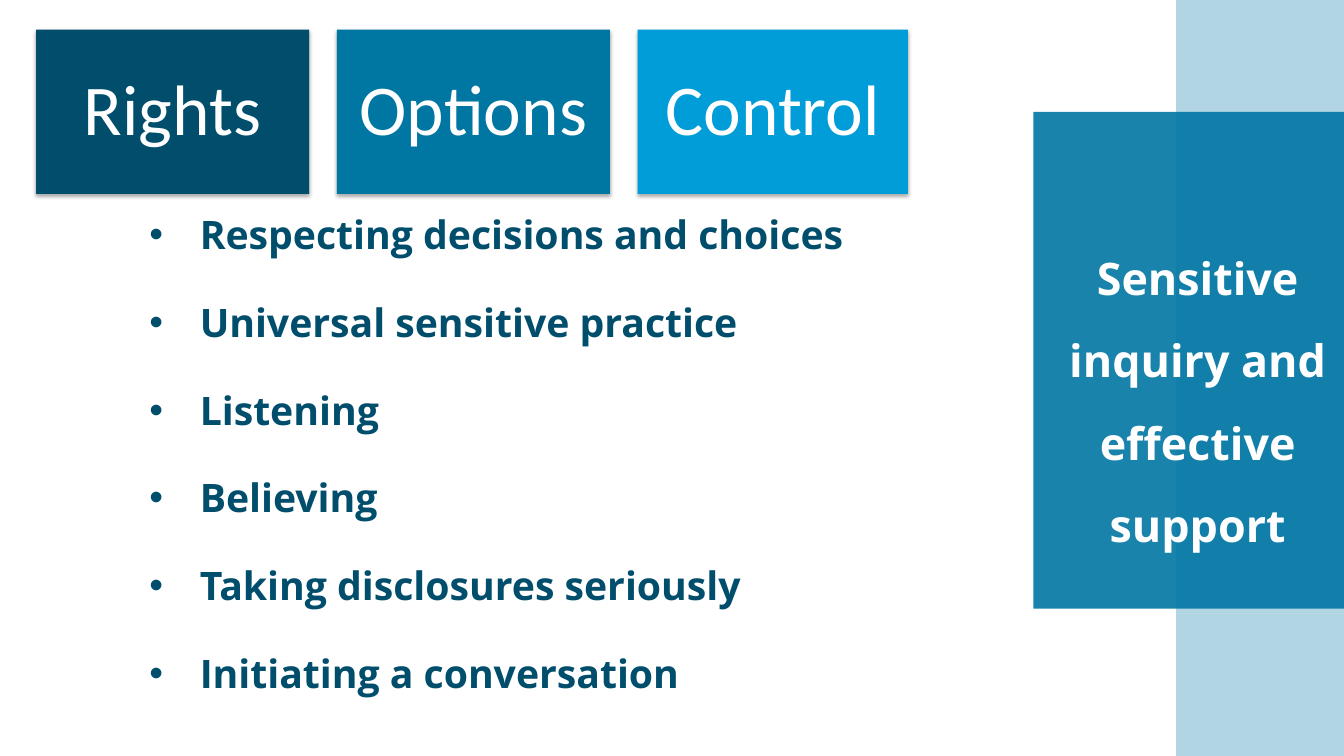
from lxml import etree
from pptx import Presentation
from pptx.dml.color import RGBColor
from pptx.enum import shapes, text
from pptx.oxml import ns
from pptx.util import Cm, Pt

NAVY = RGBColor(0x00, 0x4E, 0x6C)
TEAL = RGBColor(0x00, 0x76, 0xA3)
SKY = RGBColor(0x00, 0x9D, 0xD9)
WHITE = RGBColor(0xFF, 0xFF, 0xFF)


def add_block(left, top, width, height, color):
    block = slide.shapes.add_shape(
        shapes.MSO_SHAPE.RECTANGLE, Cm(left), Cm(top), Cm(width), Cm(height))
    block.shadow.inherit = False
    block.fill.solid()
    block.fill.fore_color.rgb = color
    block.line.fill.background()
    return block


def add_color_node(parent, color, opacity):
    """Add a colour with its opacity in percent under an XML parent."""
    node = etree.SubElement(parent, ns.qn("a:srgbClr"), val=str(color))
    etree.SubElement(node, ns.qn("a:alpha"), val=str(opacity * 1000))


prs = Presentation()
prs.slide_width, prs.slide_height = Cm(33.87), Cm(19.05)
slide = prs.slides.add_slide(prs.slide_layouts[1])
title, practices = slide.placeholders

# Side band and title panel, both translucent
for left, top, width, height, opacity in [
        (29.64, 0, 4.29, 19.05, 30), (26.04, 2.82, 8.1, 12.52, 90)]:
    panel = add_block(left, top, width, height, TEAL)
    fill = panel.element.spPr.find(ns.qn("a:solidFill"))
    fill.remove(fill[0])
    add_color_node(fill, TEAL, opacity)

# Title, brought in front of its panel
title.left, title.top, title.width, title.height = Cm(26.49), Cm(5.59), Cm(7.39), Cm(8.41)
slide.shapes.element.append(title.element)
frame = title.text_frame
frame.text = "Sensitive inquiry and effective support"
frame.word_wrap = True
frame.auto_size = text.MSO_AUTO_SIZE.NONE
frame.vertical_anchor = text.MSO_ANCHOR.TOP
frame.margin_left = frame.margin_right = frame.margin_top = frame.margin_bottom = 0
heading = frame.paragraphs[0]
heading.alignment = text.PP_ALIGN.CENTER
heading.line_spacing = Pt(58.9)
heading.font.name, heading.font.size, heading.font.bold = "Open Sans", Pt(32), True
heading.font.color.rgb = WHITE

# Practice list
practices.left, practices.top, practices.width, practices.height = (
    Cm(2.24), Cm(5.31), Cm(23.09), Cm(13.7))
frame = practices.text_frame
frame.text = "\n".join([
    "Respecting decisions and choices",
    "Universal sensitive practice",
    "Listening",
    "Believing",
    "Taking disclosures seriously",
    "Initiating a conversation",
])
frame.word_wrap = True
frame.auto_size = text.MSO_AUTO_SIZE.NONE
frame.vertical_anchor = text.MSO_ANCHOR.TOP
frame.margin_top = frame.margin_bottom = 0
for index, practice in enumerate(frame.paragraphs):
    props = practice._p.get_or_add_pPr()
    props.set("marL", str(Cm(2.54)))
    props.set("indent", str(Cm(-1.27)))
    etree.SubElement(props, ns.qn("a:buFont"), typeface="Arial")
    etree.SubElement(props, ns.qn("a:buChar"), char="•")
    practice.space_before = Pt(29 if index else 0)
    practice.font.name, practice.font.size, practice.font.bold = "Open Sans", Pt(28), True
    practice.font.color.rgb = NAVY

# Three principle cards in a row
for index, (principle, color, width) in enumerate([
        ("Rights", NAVY, 6.88), ("Options", TEAL, 6.88), ("Control", SKY, 6.81)]):
    card = add_block(0.91 + index * 7.58, 0.75, width, 4.14, color)
    effects = card.element.spPr.find(ns.qn("a:effectLst"))
    shadow = etree.SubElement(
        effects, ns.qn("a:outerShdw"), blurRad=str(Pt(3.1)), dist=str(Pt(1.8)),
        dir="5400000", rotWithShape="0")
    add_color_node(shadow, "000000", 35)
    frame = card.text_frame
    frame.text = principle
    frame.word_wrap = True
    frame.vertical_anchor = text.MSO_ANCHOR.MIDDLE
    frame.margin_left = frame.margin_right = frame.margin_top = frame.margin_bottom = Cm(0.53)
    label = frame.paragraphs[0]
    label.alignment = text.PP_ALIGN.CENTER
    label.line_spacing = 0.9
    label.font.name, label.font.size = "Calibri", Pt(51)
    label.font.color.rgb = WHITE

prs.save("out.pptx")
